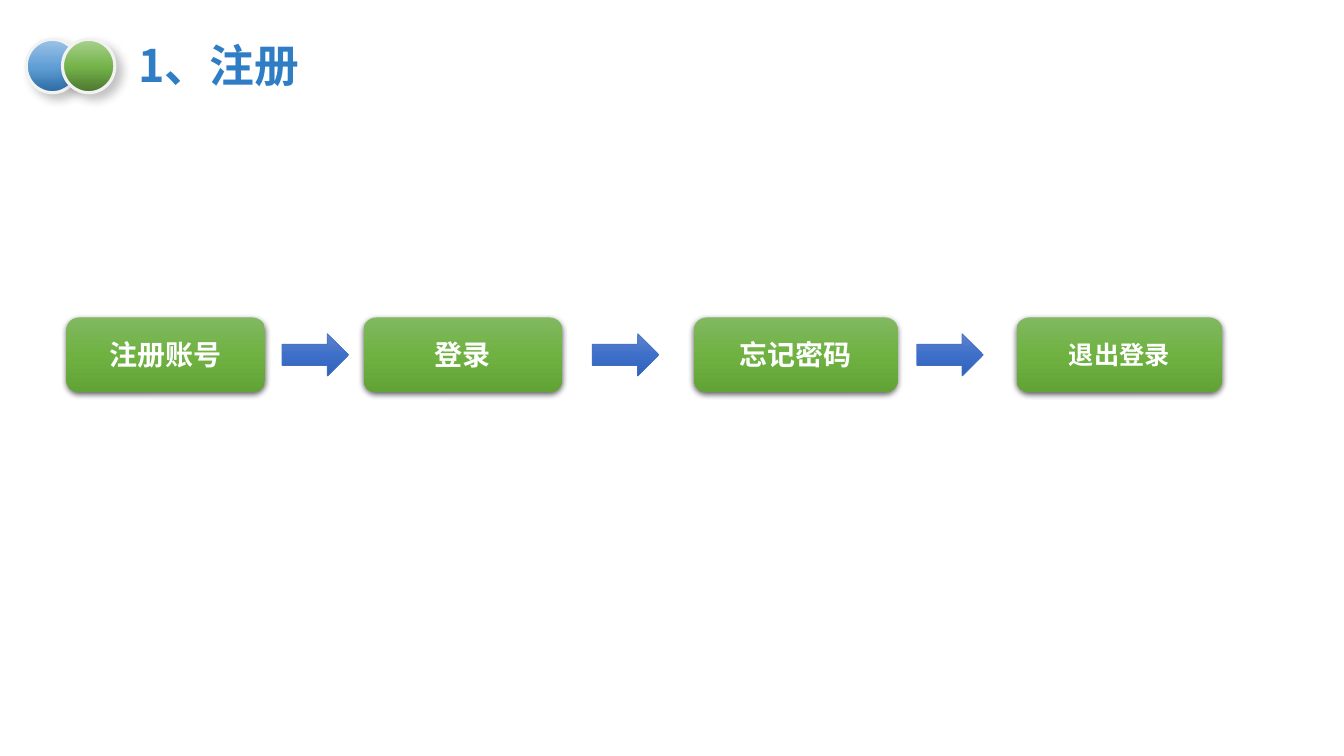
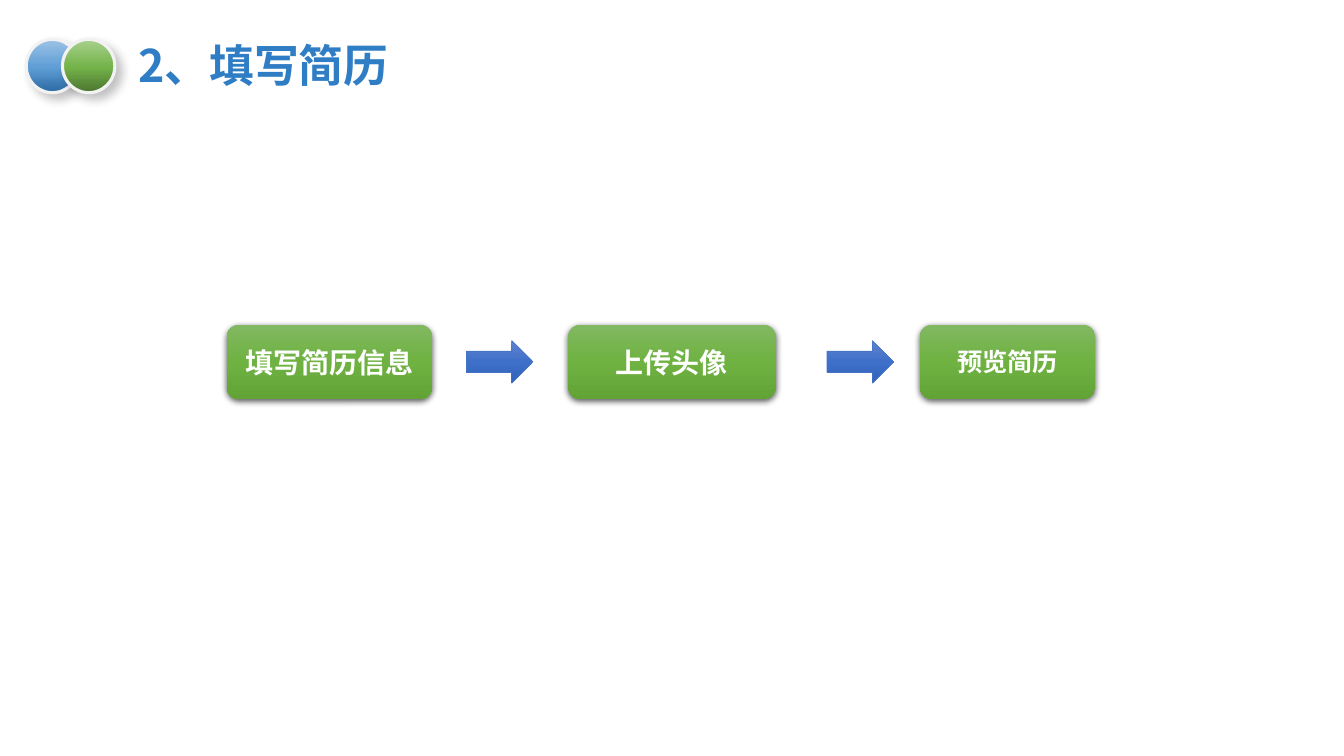
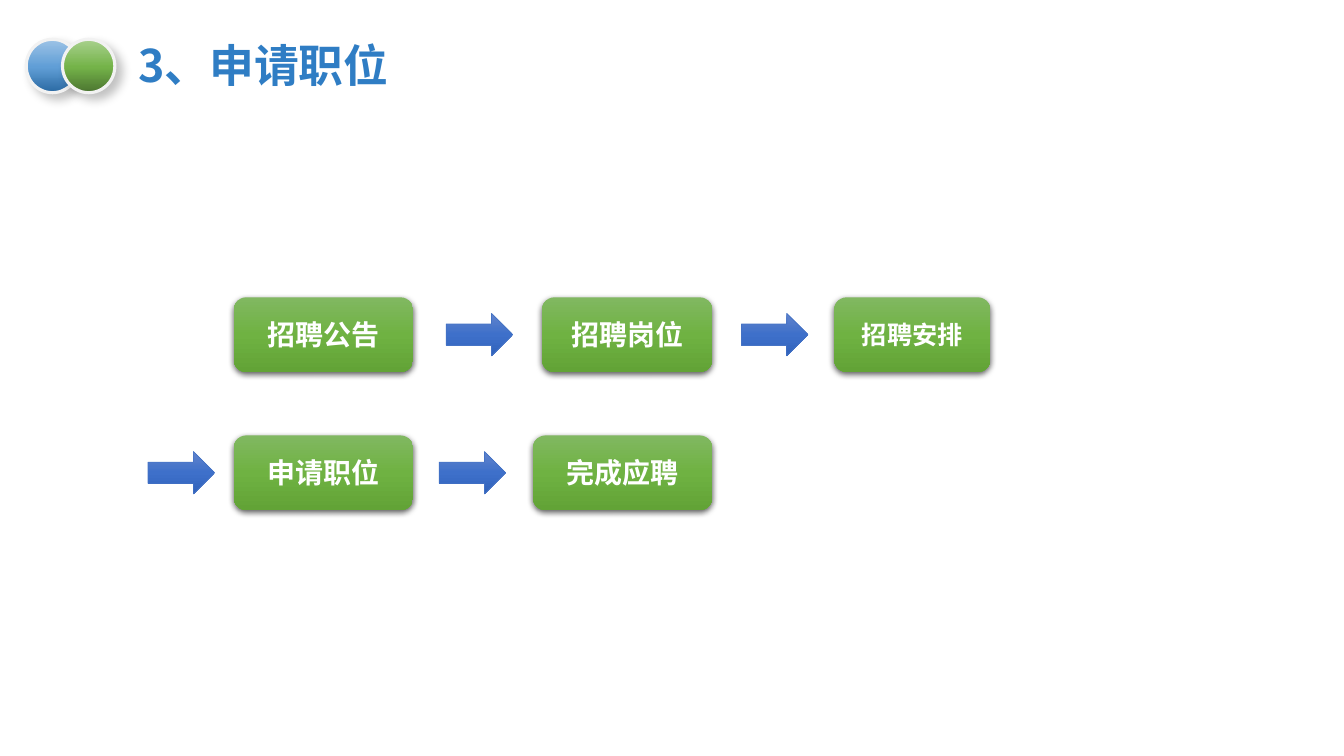
"""Build three process slides: sign up, fill in a résumé and apply for a job."""
from copy import deepcopy

from lxml import etree
from pptx import Presentation
from pptx.dml.color import RGBColor
from pptx.enum.shapes import MSO_SHAPE, PP_PLACEHOLDER
from pptx.enum.text import MSO_ANCHOR, MSO_AUTO_SIZE, PP_ALIGN
from pptx.oxml.ns import qn
from pptx.util import Pt

PX = 9144
FONT = "Noto Sans CJK SC"
OVAL, BOX, ARROW = MSO_SHAPE.OVAL, MSO_SHAPE.ROUNDED_RECTANGLE, MSO_SHAPE.RIGHT_ARROW
TITLE = PP_PLACEHOLDER.TITLE
MIDDLE, LEFT, CENTER = MSO_ANCHOR.MIDDLE, PP_ALIGN.LEFT, PP_ALIGN.CENTER
GROW = MSO_AUTO_SIZE.SHAPE_TO_FIT_TEXT

WHITE = RGBColor(0xFF, 0xFF, 0xFF)
TITLE_BLUE = RGBColor(0x2F, 0x7D, 0xC4)
RIM = RGBColor(0xF2, 0xF2, 0xF2)
ARROW_LINE = RGBColor(0x44, 0x72, 0xC4)
BLUE_DOT = [(0, RGBColor(0x9D, 0xC3, 0xE6)), (0.52, RGBColor(0x60, 0x9E, 0xD6)),
            (1, RGBColor(0x2A, 0x69, 0xA2))]
GREEN_DOT = [(0, RGBColor(0xA9, 0xD1, 0x8E)), (0.52, RGBColor(0x74, 0xB3, 0x49)),
             (1, RGBColor(0x4B, 0x74, 0x30))]
GREEN_BOX = [(0, RGBColor(0x81, 0xB8, 0x61)), (0.5, RGBColor(0x6F, 0xB2, 0x42)),
             (1, RGBColor(0x62, 0xA3, 0x36))]
BLUE_ARROW = [(0, RGBColor(0x61, 0x83, 0xCB)), (0.5, RGBColor(0x3E, 0x70, 0xCA)),
              (1, RGBColor(0x30, 0x62, 0xBB))]
DOT_SHADOW = (23, 7, 5.9, 45)
BOX_SHADOW = (63, 4.5, 1.5, 90)

BOX_H, ARROW_W, ARROW_H = 74, 66, 42
FLOWS = [
    ("1、注册", [
        (315, [("注册账号", 66, 197, 20), ("登录", 361, 197, 20),
               ("忘记密码", 689, 202, 20), ("退出登录", 1009, 204, 18)],
         [280, 588, 910]),
    ]),
    ("2、填写简历", [
        (322, [("填写简历信息", 225, 204, 20), ("上传头像", 564, 206, 20),
               ("预览简历", 913, 174, 18)],
         [463, 821]),
    ]),
    ("3、申请职位", [
        (295, [("招聘公告", 232, 178, 20), ("招聘岗位", 538, 169, 20),
               ("招聘安排", 828, 155, 18)],
         [443, 736]),
        (432, [("申请职位", 232, 178, 20), ("完成应聘", 529, 178, 20)],
         [147, 436]),
    ]),
]


def add_shape(s, kind, x, y, w, h, stops, line=None, line_pt=0, shadow=None):
    sp = s.shapes.add_shape(kind, x * PX, y * PX, w * PX, h * PX)
    sp.fill.gradient()
    sp.fill.gradient_angle = 270
    gs_list = sp.element.spPr.find(".//" + qn("a:gsLst"))
    gs_list.append(deepcopy(gs_list[0]))
    for stop, (position, color) in zip(sp.fill.gradient_stops, stops):
        stop.position = position
        stop.color.rgb = color
    if line is None:
        sp.line.fill.background()
    else:
        sp.line.color.rgb = line
        sp.line.width = Pt(line_pt)
    sp.shadow.inherit = False
    if shadow:
        alpha, blur, dist, angle = shadow
        effects = sp.element.spPr.find(qn("a:effectLst"))
        outer = etree.SubElement(effects, qn("a:outerShdw"), blurRad=str(Pt(blur)),
                                 dist=str(Pt(dist)), dir=str(angle * 60000),
                                 algn="ctr", rotWithShape="0")
        black = etree.SubElement(outer, qn("a:srgbClr"), val="000000")
        etree.SubElement(black, qn("a:alpha"), val=str(alpha * 1000))
    return sp


def set_text(sp, text, size, color, align):
    tf = sp.text_frame
    tf.text = text
    tf.word_wrap = True
    tf.vertical_anchor = MIDDLE
    p = tf.paragraphs[0]
    p.alignment = align
    font = p.runs[0].font
    font.name, font.size, font.bold = FONT, Pt(size), True
    font.color.rgb = color
    for rpr in sp.element.iter(qn("a:rPr")):
        etree.SubElement(rpr, qn("a:ea"), typeface=FONT)


prs = Presentation()
prs.slide_width, prs.slide_height = 1334 * PX, 750 * PX
layout = prs.slide_layouts.get_by_name("Title Only")
for ph in list(layout.placeholders):
    if ph.placeholder_format.type == TITLE:
        ph.left, ph.top, ph.width, ph.height = 129 * PX, 39 * PX, 714 * PX, 56 * PX
    else:
        ph.element.getparent().remove(ph.element)

slides = [prs.slides.add_slide(layout) for _ in FLOWS]
dots = [add_shape(slides[0], OVAL, x, 39, 52, 53, stops, RIM, 2.25, DOT_SHADOW)
        for x, stops in ((26, BLUE_DOT), (62, GREEN_DOT))]
for dot in dots:
    layout.shapes.element.append(dot.element)

for s, (title, rows) in zip(slides, FLOWS):
    sp = s.shapes.title
    set_text(sp, title, 32, TITLE_BLUE, LEFT)
    tf = sp.text_frame
    tf.auto_size = GROW
    tf.margin_left = tf.margin_right = 8 * PX
    tf.margin_top = tf.margin_bottom = 4 * PX
    tf.paragraphs[0].line_spacing = 0.9
    for y, boxes, arrows in rows:
        for text, x, w, size in boxes:
            sp = add_shape(s, BOX, x, y, w, BOX_H, GREEN_BOX, shadow=BOX_SHADOW)
            set_text(sp, text, size, WHITE, CENTER)
        for x in arrows:
            add_shape(s, ARROW, x, y + (BOX_H - ARROW_H) // 2, ARROW_W, ARROW_H,
                      BLUE_ARROW, ARROW_LINE, 0.5)

prs.save("out.pptx")
